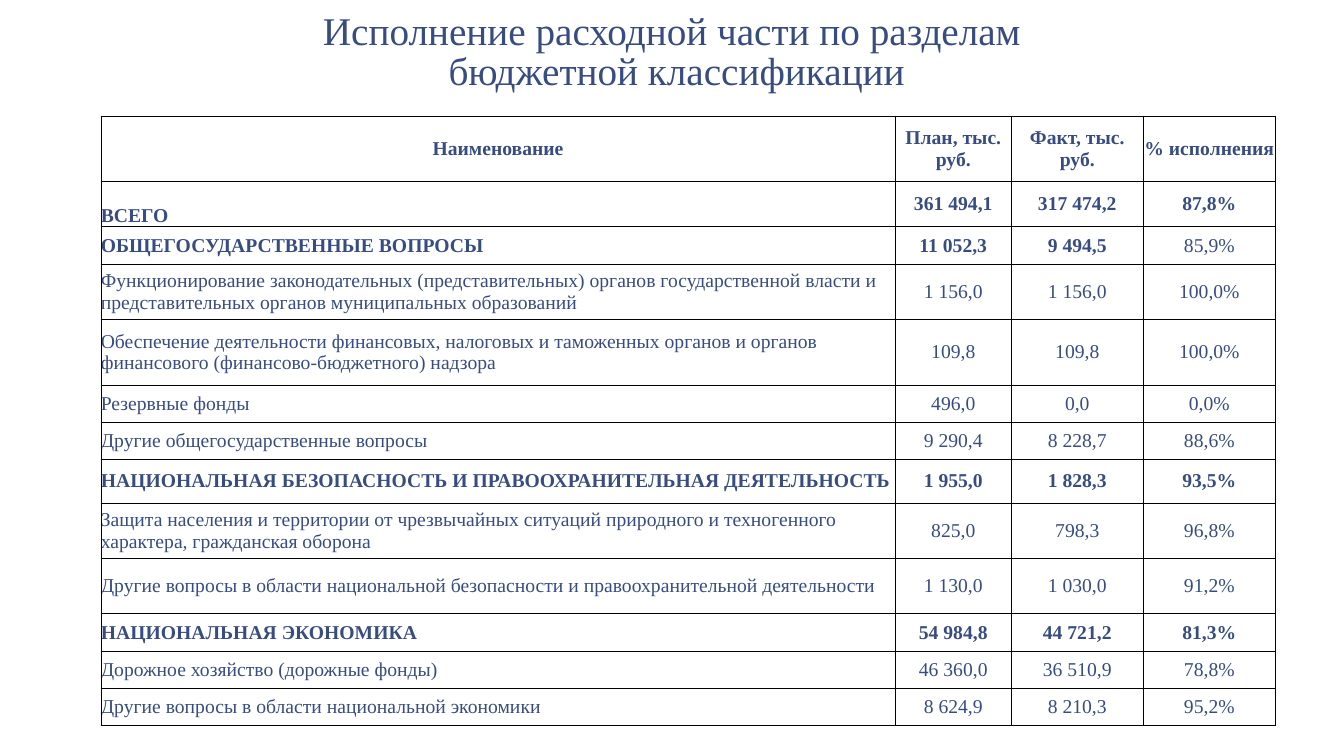
from lxml.etree import SubElement
from pptx import Presentation
from pptx.dml.color import RGBColor
from pptx.enum.text import MSO_ANCHOR, MSO_AUTO_SIZE, PP_ALIGN
from pptx.oxml.ns import qn
from pptx.util import Inches, Pt

NAVY = RGBColor(0x37, 0x4C, 0x81)
BLACK = RGBColor(0x00, 0x00, 0x00)
WHITE = RGBColor(0xFF, 0xFF, 0xFF)


def write(tf, text, size=14, bold=False, align=PP_ALIGN.CENTER, spacing=None):
    p = tf.paragraphs[0]
    p.text = text
    p.alignment = align
    p.line_spacing = spacing
    for r in p.runs:
        r.font.name = "Times New Roman"
        r.font.size = Pt(size)
        r.font.bold = bold
        r.font.color.rgb = NAVY


def add_borders(cell):
    tcPr = cell._tc.get_or_add_tcPr()
    for i, side in enumerate(("a:lnL", "a:lnR", "a:lnT", "a:lnB")):
        ln = SubElement(tcPr, qn(side), w=str(Pt(0.5)))
        fill = SubElement(ln, qn("a:solidFill"))
        SubElement(fill, qn("a:srgbClr"), val=str(BLACK))
        tcPr.remove(ln)
        tcPr.insert(i, ln)


prs = Presentation()
prs.slide_width, prs.slide_height = Inches(13.33), Inches(7.5)
s = prs.slides.add_slide(prs.slide_layouts[5])
s.background.fill.solid()
s.background.fill.fore_color.rgb = WHITE

title = s.shapes.title
title.left, title.top = Inches(0.29), Inches(0.21)
title.width, title.height = Inches(12.84), Inches(0.79)
tf = title.text_frame
tf.word_wrap = True
tf.auto_size = MSO_AUTO_SIZE.NONE
tf.vertical_anchor = MSO_ANCHOR.BOTTOM
tf.margin_left = tf.margin_right = Inches(0.13)
tf.margin_top = tf.margin_bottom = Inches(0.07)
write(tf, "Исполнение расходной части по разделам \vбюджетной классификации",
      size=28, spacing=0.85)

col_widths = [7.88, 1.15, 1.31, 1.31]
rows = [
    (0.65, "Наименование", "План, тыс. руб.", "Факт, тыс. руб.", "% исполнения"),
    (0.45, "ВСЕГО", "361 494,1", "317 474,2", "87,8%"),
    (0.37, "ОБЩЕГОСУДАРСТВЕННЫЕ ВОПРОСЫ", "11 052,3", "9 494,5", "85,9%"),
    (0.55, "Функционирование законодательных (представительных) органов государственной власти "
           "и представительных органов муниципальных образований", "1 156,0", "1 156,0", "100,0%"),
    (0.65, "Обеспечение деятельности финансовых, налоговых и таможенных органов и органов "
           "финансового (финансово-бюджетного) надзора", "109,8", "109,8", "100,0%"),
    (0.37, "Резервные фонды", "496,0", "0,0", "0,0%"),
    (0.37, "Другие общегосударственные вопросы", "9 290,4", "8 228,7", "88,6%"),
    (0.43, "НАЦИОНАЛЬНАЯ БЕЗОПАСНОСТЬ И ПРАВООХРАНИТЕЛЬНАЯ ДЕЯТЕЛЬНОСТЬ",
     "1 955,0", "1 828,3", "93,5%"),
    (0.55, "Защита населения и территории от чрезвычайных ситуаций природного и техногенного "
           "характера, гражданская оборона", "825,0", "798,3", "96,8%"),
    (0.55, "Другие вопросы в области национальной безопасности и правоохранительной деятельности",
     "1 130,0", "1 030,0", "91,2%"),
    (0.37, "НАЦИОНАЛЬНАЯ ЭКОНОМИКА", "54 984,8", "44 721,2", "81,3%"),
    (0.37, "Дорожное хозяйство (дорожные фонды)", "46 360,0", "36 510,9", "78,8%"),
    (0.37, "Другие вопросы в области национальной экономики", "8 624,9", "8 210,3", "95,2%"),
]

table = s.shapes.add_table(len(rows), len(col_widths), Inches(1), Inches(1.15),
                           Inches(11.65), Inches(6.07)).table
table.first_row = table.horz_banding = False
for col, width in zip(table.columns, col_widths):
    col.width = Inches(width)

for i, (height, *texts) in enumerate(rows):
    table.rows[i].height = Inches(height)
    section = i == 0 or texts[0].isupper()
    for j, text in enumerate(texts):
        cell = table.cell(i, j)
        cell.margin_left = cell.margin_right = cell.margin_top = cell.margin_bottom = 0
        cell.vertical_anchor = MSO_ANCHOR.BOTTOM if text == "ВСЕГО" else MSO_ANCHOR.MIDDLE
        cell.fill.background()
        add_borders(cell)
        write(cell.text_frame, text, bold=section and text != "85,9%",
              align=PP_ALIGN.LEFT if i and j == 0 else PP_ALIGN.CENTER)

prs.save("out.pptx")
